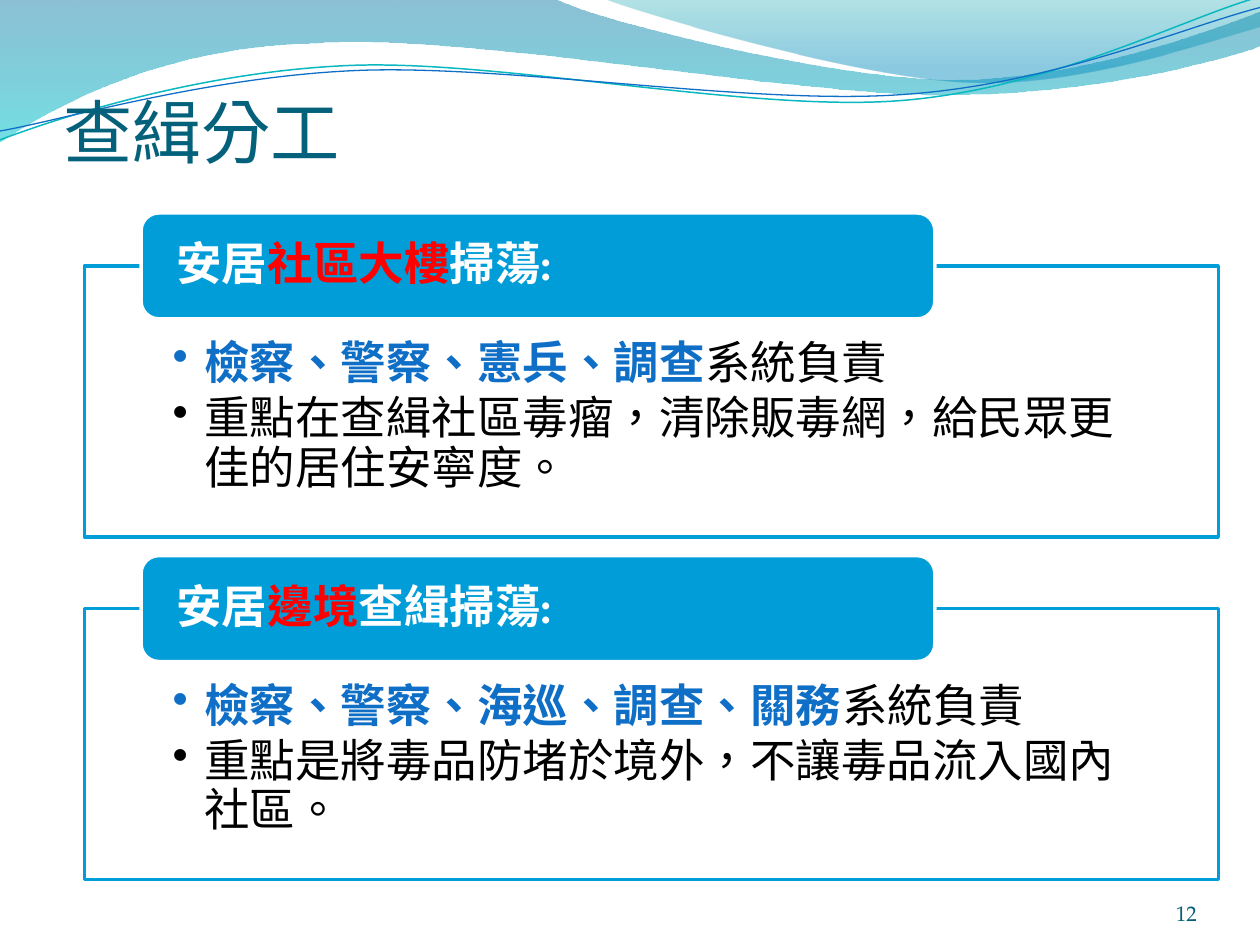
from collections import namedtuple
from math import cos, radians, sin

from lxml import etree
from pptx import Presentation
from pptx.dml.color import RGBColor
from pptx.enum.shapes import MSO_SHAPE
from pptx.enum.text import MSO_ANCHOR, MSO_AUTO_SIZE, PP_ALIGN
from pptx.oxml.ns import qn
from pptx.util import Inches, Pt

RECTANGLE, ROUNDED = MSO_SHAPE.RECTANGLE, MSO_SHAPE.ROUNDED_RECTANGLE
TOP, MIDDLE, BOTTOM = MSO_ANCHOR.TOP, MSO_ANCHOR.MIDDLE, MSO_ANCHOR.BOTTOM
LEFT, RIGHT = PP_ALIGN.LEFT, PP_ALIGN.RIGHT

WIDTH, HEIGHT = 10, 7.5
TITLE_FONT, BODY_FONT = "Calibri", "TeX Gyre Pagella"
COLORS = {
    "title": "04617B", "number": "045D75", "card": "009DD9", "white": "FFFFFF",
    "alert": "FF0000", "agency": "0F6FC6", "text": "000000",
    "teal_line": "0AB8BF", "blue_line": "0F6FC6",
}
Box = namedtuple("Box", "left top width height")
STRAND_TILT = 357.3

# Each outline is a start point, then straight (x, y) or cubic (6 numbers) segments, in inches.
BANDS = [
    ([(0, 0), (4.4, -0.01), (4.76, 0.17, 6.64, 0.63, 7.58, 0.63),
      (8.53, 0.63, 9.58, 0.26, 10, 0.09), (10.01, 0.36),
      (9.83, 0.44, 8.7, 0.76, 7.46, 0.75), (6.22, 0.75, 3.82, 0.28, 2.57, 0.34),
      (1.29, 0.36, 0.46, 0.83, -0.01, 1.13), (0, 0)],
     [(0, "0074A1", 45), (1, "00C6CF", 55)]),
    ([(4.79, -0.01), (5.09, 0.11, 6.82, 0.62, 7.69, 0.65),
      (8.56, 0.69, 9.61, 0.32, 10, 0.21), (10, 0), (4.79, -0.01)],
     [(0, "00A1A9", 30), (0.8, "008BBF", 45)]),
]
STRANDS = [
    ([(0, 1.11), (0.48, 0.93, 1.58, 0.57, 2.77, 0.52),
      (3.95, 0.47, 5.93, 0.89, 7.13, 0.8), (8.33, 0.71, 9.38, 0.15, 9.98, -0.02)],
     (4.99, 0.57), "teal_line", 0.85),
    ([(0, 1.04), (0.47, 0.96, 1.64, 0.61, 2.83, 0.56),
      (4.03, 0.51, 5.97, 0.84, 7.17, 0.75), (8.36, 0.67, 9.41, 0.21, 10, 0.06)],
     (5, 0.59), "blue_line", 0.75),
]
CARDS = [
    (("安居", "社區大樓", "掃蕩:"), "檢察、警察、憲兵、調查",
     "重點在查緝社區毒瘤，清除販毒網，給民眾更佳的居住安寧度。"),
    (("安居", "邊境", "查緝掃蕩:"), "檢察、警察、海巡、調查、關務",
     "重點是將毒品防堵於境外，不讓毒品流入國內社區。"),
]


def rgb(name):
    return RGBColor.from_string(COLORS.get(name, name))


def emu(box):
    return [Inches(length) for length in box]


def set_alpha(color_parent, percent):
    color = next(color_parent.iter(qn("a:srgbClr")))
    etree.SubElement(color, qn("a:alpha"), val=str(percent * 1000))


def pairs(segment):
    return list(zip(segment[::2], segment[1::2]))


def turn(outline, center, degrees):
    """Rotate every point of an outline clockwise about a center."""
    angle = radians(degrees)
    return [tuple(value for x, y in pairs(segment) for value in (
        center[0] + (x - center[0]) * cos(angle) - (y - center[1]) * sin(angle),
        center[1] + (x - center[0]) * sin(angle) + (y - center[1]) * cos(angle)))
        for segment in outline]


def add_outline(shapes, outline, close):
    """Build a freeform through the segment ends, then bend its cubic segments."""
    ends = [emu(segment[-2:]) for segment in outline]
    builder = shapes.build_freeform(*ends[0])
    builder.add_line_segments(ends[1:], close=close)
    shape = builder.convert_to_shape()
    shape.shadow.inherit = False
    lines = list(shape.element.iter(qn("a:lnTo")))
    for line, segment in zip(lines, outline[1:]):
        if len(segment) == 2:
            continue
        curve = etree.Element(qn("a:cubicBezTo"))
        for x, y in pairs(segment):
            etree.SubElement(curve, qn("a:pt"), x=str(Inches(x) - shape.left),
                             y=str(Inches(y) - shape.top))
        line.getparent().replace(line, curve)
    return shape


def add_waves(slide):
    for outline, stops in BANDS:
        band = add_outline(slide.shapes, outline, True)
        band.line.fill.background()
        band.fill.gradient()
        band.fill.gradient_angle = 270
        for stop, (position, color, _) in zip(band.fill.gradient_stops, stops):
            stop.position = position
            stop.color.rgb = rgb(color)
        gradient = band.element.spPr.find(qn("a:gradFill"))
        for element, (_, _, alpha) in zip(gradient.iter(qn("a:gs")), stops):
            set_alpha(element, alpha)
    group = slide.shapes.add_group_shape()
    for outline, center, color, weight in STRANDS:
        level = turn(outline, center, 360 - STRAND_TILT)
        strand = add_outline(group.shapes, level, False)
        strand.rotation = STRAND_TILT
        strand.fill.background()
        strand.line.color.rgb = rgb(color)
        strand.line.width = Pt(weight)


def set_frame(shape, anchor, insets):
    frame = shape.text_frame
    frame.word_wrap = True
    frame.auto_size = MSO_AUTO_SIZE.NONE
    frame.vertical_anchor = anchor
    (frame.margin_left, frame.margin_top,
     frame.margin_right, frame.margin_bottom) = emu(insets)
    return frame


def add_runs(paragraph, parts, size=26, font=BODY_FONT, align=LEFT):
    """Fill a paragraph with (text, color, bold) parts."""
    paragraph.alignment = align
    for text, color, bold in parts:
        run = paragraph.add_run()
        run.text = text
        run.font.size, run.font.name, run.font.bold = Pt(size), font, bold
        run.font.color.rgb = rgb(color)
        run._r.get_or_add_rPr().set("lang", "zh-TW")


def add_bullet(paragraph):
    properties = paragraph._p.get_or_add_pPr()
    properties.set("marL", str(Inches(0.25)))
    properties.set("indent", str(-Inches(0.25)))
    etree.SubElement(properties, qn("a:buChar"), char="•")


def add_panel(shapes, kind, box, fill, line):
    panel = shapes.add_shape(kind, *emu(box))
    panel.shadow.inherit = False
    panel.fill.solid()
    panel.fill.fore_color.rgb = rgb(fill)
    panel.line.color.rgb = rgb(line)
    panel.line.width = Pt(2)
    return panel


def add_card(slide, box, heading, agencies, goal):
    """Draw a framed body whose top edge runs through the middle of its heading tab."""
    shapes = slide.shapes.add_group_shape().shapes
    tab_height = box.height * 0.327
    body_box = Box(box.left, box.top + tab_height / 2, box.width, box.height - tab_height / 2)
    body = add_panel(shapes, RECTANGLE, body_box, "white", "card")
    set_alpha(body.element.spPr.find(qn("a:solidFill")), 90)
    frame = set_frame(shapes.add_textbox(*emu(body_box)), TOP, (0.7, 0.59, 0.7, 0.2))
    bullets = [[(agencies, "agency", True), ("系統負責", "text", False)],
               [(goal, "text", False)]]
    for index, parts in enumerate(bullets):
        paragraph = frame.add_paragraph() if index else frame.paragraphs[0]
        add_runs(paragraph, parts)
        paragraph.line_spacing = 0.9
        paragraph.space_after = Pt(3.6)
        add_bullet(paragraph)

    tab_box = Box(box.left + box.width * 0.05, box.top, box.width * 0.7, tab_height)
    add_panel(shapes, ROUNDED, tab_box, "card", "white")
    inner = Box(tab_box.left + 0.04, tab_box.top + 0.04,
                tab_box.width - 0.08, tab_box.height - 0.08)
    label = shapes.add_textbox(*emu(inner))
    paragraph = set_frame(label, MIDDLE, (0.24, 0, 0.24, 0)).paragraphs[0]
    paragraph.line_spacing = 0.9
    add_runs(paragraph, [(text, color, True) for text, color
                         in zip(heading, ("white", "alert", "white"))])


def format_title(slide, box, text):
    title = slide.shapes.title
    title.left, title.top, title.width, title.height = emu(box)
    frame = set_frame(title, BOTTOM, (0, 0.05, 0, 0.66))
    frame.paragraphs[0].line_spacing = 0.75
    add_runs(frame.paragraphs[0], [(text, "title", False)], 39.6, TITLE_FONT)
    title.element.getparent().append(title.element)  # in front of the waves


def add_page_number(slide, box, number):
    frame = set_frame(slide.shapes.add_textbox(*emu(box)), BOTTOM, (0, 0, 0, 0))
    add_runs(frame.paragraphs[0], [(number, "number", False)], 12, align=RIGHT)


def main():
    presentation = Presentation()
    presentation.slide_width, presentation.slide_height = Inches(WIDTH), Inches(HEIGHT)
    slide = presentation.slides.add_slide(presentation.slide_layouts[5])
    add_waves(slide)
    margin, content_width = WIDTH * 0.05, WIDTH * 0.9
    format_title(slide, Box(margin, 0.77, content_width, 1.25), "查緝分工")
    card_height, card_pitch = 2.57, 2.72
    for row, card in enumerate(CARDS):
        box = Box(WIDTH * 0.067, 1.69 + row * card_pitch, content_width, card_height)
        add_card(slide, box, *card)
    add_page_number(slide, Box(8.67, 6.95, 0.83, 0.4), "12")
    presentation.save("out.pptx")


if __name__ == "__main__":
    main()
